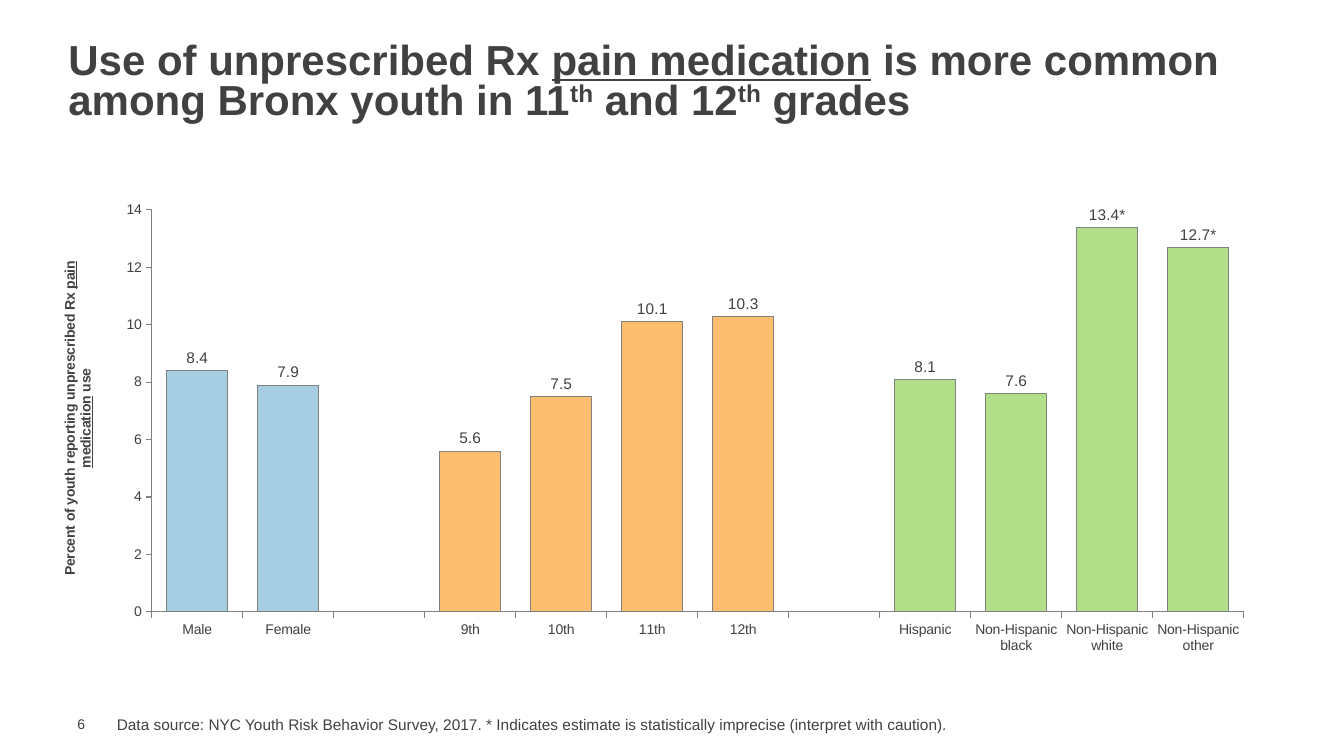
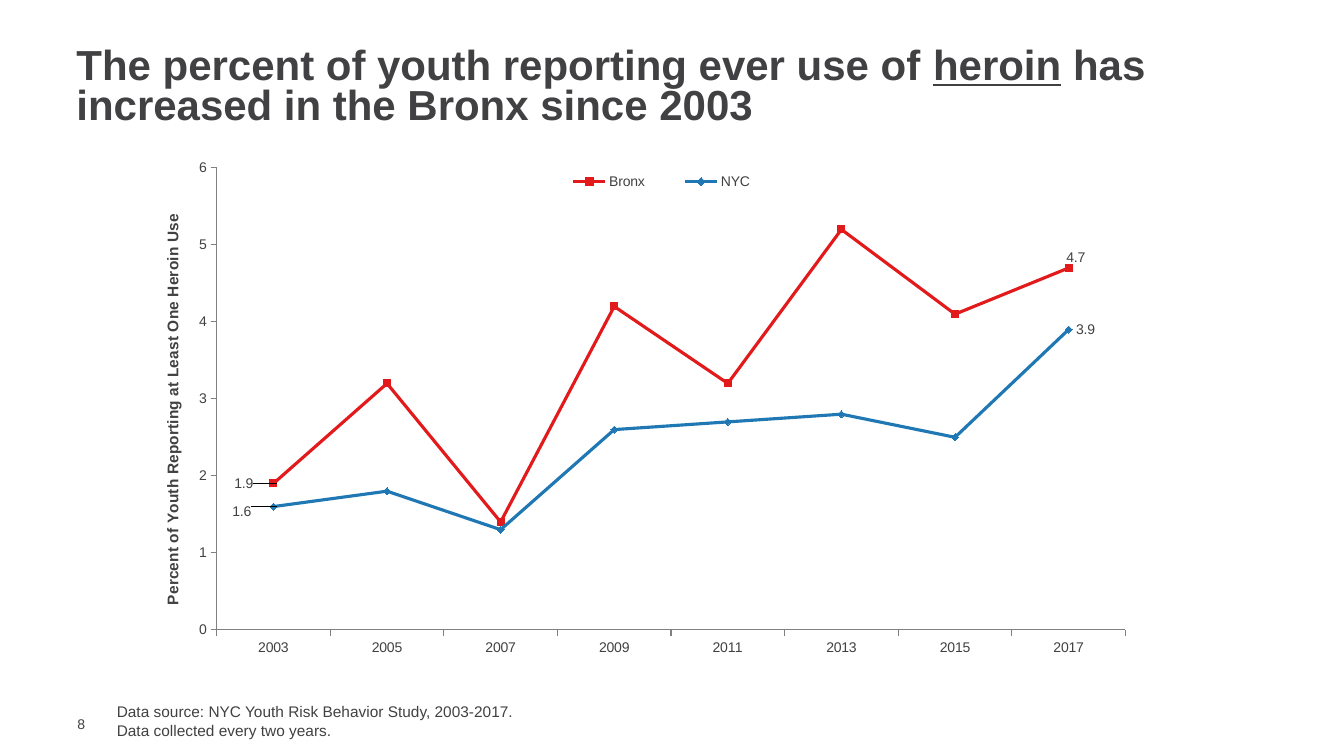
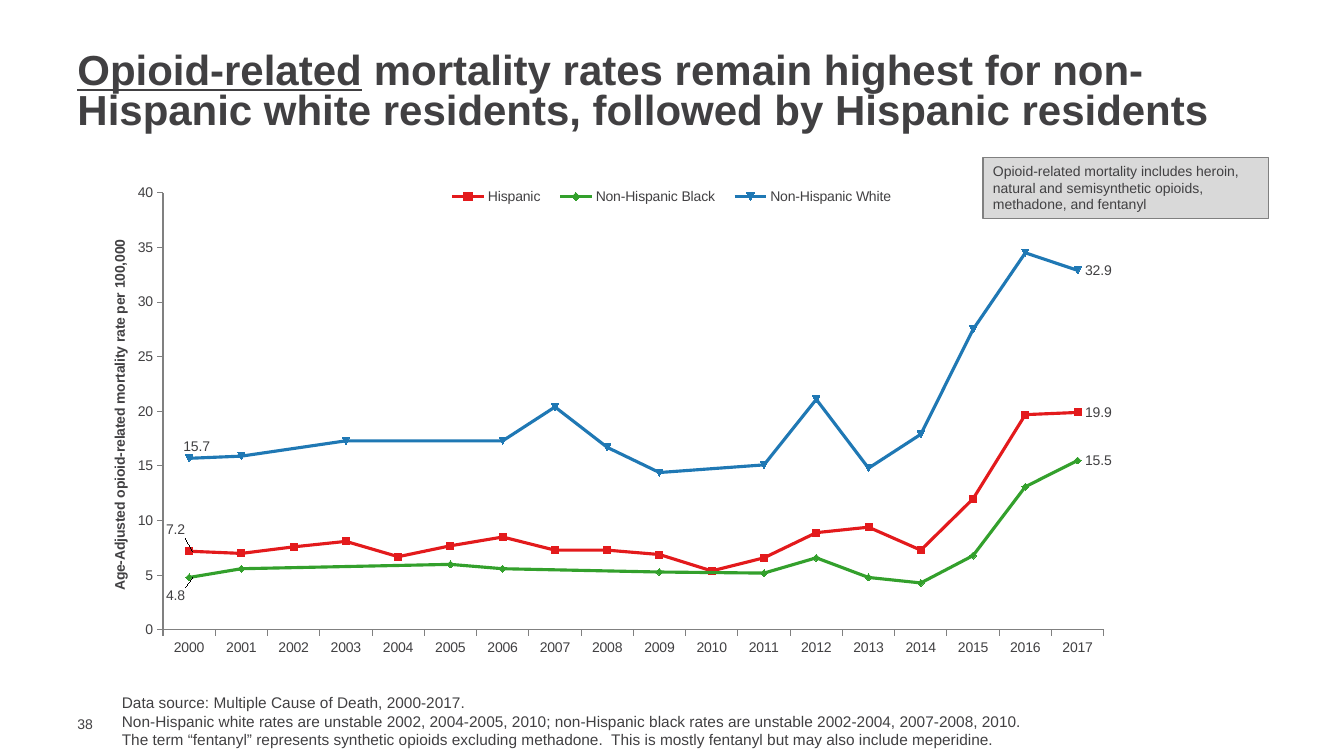
import pptx
import pptx.chart.data
import pptx.dml.color
import pptx.enum.chart
import pptx.enum.shapes
import pptx.enum.text
import pptx.oxml
import pptx.oxml.ns
import pptx.util
from pptx.util import Inches

# Shared style
FONT = "Arial"
TEXT, AXIS, WHITE, NOTE_FILL = "414042", "808080", "FFFFFF", "D9D9D9"
RED, BLUE, GREEN = "E31A1C", "1F78B4", "33A02C"
PALE_BLUE, PALE_ORANGE, PALE_GREEN = "A6CEE3", "FDBF6F", "B2DF8A"
CHART_TYPE = pptx.enum.chart.XL_CHART_TYPE
LABEL_POSITION = pptx.enum.chart.XL_LABEL_POSITION
MIDDLE = pptx.enum.text.MSO_ANCHOR.MIDDLE
LEADER_LINES = (
    '<c:extLst xmlns:c="http://schemas.openxmlformats.org/drawingml/2006/chart">'
    '<c:ext uri="{CE6537A1-D6FC-4f65-9D91-7224C49458BB}" '
    'xmlns:c15="http://schemas.microsoft.com/office/drawing/2012/chart">'
    '<c15:showLeaderLines val="1"/></c:ext></c:extLst>')


def colour(value):
    return pptx.dml.color.RGBColor.from_string(value)


def style_font(font, size, bold=False):
    font.name = FONT
    font.size = pptx.util.Pt(size)
    font.bold = bold
    font.color.rgb = colour(TEXT)


def style_line(line, value, width=0.75):
    line.color.rgb = colour(value)
    line.width = pptx.util.Pt(width)


def paint(fill, value):
    fill.solid()
    fill.fore_color.rgb = colour(value)


def add_runs(paragraph, runs):
    """Runs are (text, style) pairs; style is "", "underline" or "super"."""
    for text, style in runs:
        run = paragraph.add_run()
        run.text = text
        if style == "underline":
            run.font.underline = True
        elif style == "super":
            run._r.get_or_add_rPr().set("baseline", "30000")


# Text regions
def fill_text(shape, paragraphs, size, bold=False, spacing=None):
    frame = shape.text_frame
    frame.word_wrap = True
    for index, runs in enumerate(paragraphs):
        paragraph = frame.paragraphs[0] if index == 0 else frame.add_paragraph()
        paragraph.alignment = pptx.enum.text.PP_ALIGN.LEFT
        if spacing:
            paragraph.line_spacing = spacing
        style_font(paragraph.font, size, bold)
        add_runs(paragraph, runs)
    return frame


def add_text(slide, box, paragraphs, size, **options):
    shape = slide.shapes.add_textbox(*map(Inches, box))
    return fill_text(shape, paragraphs, size, **options)


def add_page(presentation, number, title_at, title, source_box, sources):
    slide = presentation.slides.add_slide(presentation.slide_layouts[6])
    paint(slide.background.fill, WHITE)
    # Page number
    frame = add_text(slide, (0.67, 7.1, 0.43, 0.17), [[(str(number), "")]], 10)
    frame.margin_left = Inches(0.1)
    frame.margin_right = frame.margin_top = frame.margin_bottom = 0
    frame.vertical_anchor = MIDDLE
    # Title
    frame = add_text(slide, (*title_at, 12, 0.91), [title], 30, bold=True, spacing=0.8)
    frame.vertical_anchor = MIDDLE
    # Source lines
    add_text(slide, source_box, [[(line, "")] for line in sources], 11)
    return slide


def add_note(slide, box, text):
    shape = slide.shapes.add_shape(
        pptx.enum.shapes.MSO_SHAPE.RECTANGLE, *map(Inches, box))
    shape.shadow.inherit = False
    paint(shape.fill, NOTE_FILL)
    style_line(shape.line, AXIS)
    frame = fill_text(shape, [[(text, "")]], 10)
    frame.vertical_anchor = pptx.enum.text.MSO_ANCHOR.TOP


# Charts
def set_layout(element, index, numbers, mode="edge", inner=False):
    """Place a chart part by fractions of the chart: x, y and maybe w, h."""
    tag = pptx.oxml.ns.qn
    layout = element.find(tag("c:layout"))
    if layout is None:
        layout = element.makeelement(tag("c:layout"), {})
        element.insert(index, layout)
    manual = layout.makeelement(tag("c:manualLayout"), {})
    layout.append(manual)
    entries = [("layoutTarget", "inner")] if inner else []
    entries += [("xMode", mode), ("yMode", mode)]
    entries += zip("xywh", numbers)
    for name, value in entries:
        manual.append(manual.makeelement(tag("c:" + name), {"val": str(value)}))


def add_chart(slide, box, kind, categories, series, top, step, plot_at,
              axis_title, title_at, title_size=10):
    data = pptx.chart.data.CategoryChartData()
    data.categories = categories
    for name, values in series:
        data.add_series(name, values)
    chart = slide.shapes.add_chart(kind, *map(Inches, box), data).chart
    chart.has_title = False
    chart.has_legend = False
    style_font(chart.font, 10)
    chart.plots[0].vary_by_categories = False
    # Axes
    for axis in (chart.category_axis, chart.value_axis):
        axis.has_major_gridlines = False
        axis.major_tick_mark = pptx.enum.chart.XL_TICK_MARK.OUTSIDE
        style_line(axis.format.line, AXIS)
        style_font(axis.tick_labels.font, 10)
    axis = chart.value_axis
    axis.minimum_scale, axis.maximum_scale, axis.major_unit = 0, top, step
    # Axis title
    frame = axis.axis_title.text_frame
    frame._txBody.bodyPr.set("rot", "-5400000")
    frame._txBody.bodyPr.set("vert", "horz")
    style_font(frame.paragraphs[0].font, title_size, bold=True)
    add_runs(frame.paragraphs[0], axis_title)
    set_layout(axis.axis_title._element, 0, title_at)
    plot_area = chart._chartSpace.xpath("c:chart/c:plotArea")[0]
    set_layout(plot_area, 0, plot_at, inner=True)
    return chart


def add_column_chart(slide, box, groups, starred, **options):
    """Groups are (colour, {category: value}), set apart by an empty column."""
    columns = []
    for fill, group in groups:
        if columns:
            columns.append(("", None, None))
        columns += [(name, value, fill) for name, value in group.items()]
    names, values, fills = zip(*columns)
    chart = add_chart(slide, box, CHART_TYPE.COLUMN_CLUSTERED, names,
                      [("Series 1", values)], **options)
    plot = chart.plots[0]
    plot.gap_width = 50
    series = plot.series[0]
    series.invert_if_negative = False
    paint(series.format.fill, PALE_GREEN)
    style_line(series.format.line, AXIS)
    labels = series.data_labels
    labels.show_value = True
    labels.position = LABEL_POSITION.OUTSIDE_END
    style_font(labels.font, 11)
    for index, (name, value, fill) in enumerate(columns):
        if fill is None:
            continue
        point = series.points[index]
        paint(point.format.fill, fill)
        style_line(point.format.line, AXIS)
        if name in starred:
            paragraph = point.data_label.text_frame.paragraphs[0]
            style_font(paragraph.font, 11)
            add_runs(paragraph, [(f"{value}*", "")])
            point.data_label.position = LABEL_POSITION.OUTSIDE_END


def add_line_chart(slide, box, years, lines, legend_at, **options):
    """Lines are (name, colour, values, first label shift, last label shift)."""
    chart = add_chart(slide, box, CHART_TYPE.LINE_MARKERS, years,
                      [(name, values) for name, _, values, _, _ in lines], **options)
    # Lines run on across missing years
    chart._chartSpace.xpath("c:chart/c:dispBlanksAs")[0].set("val", "span")
    # Legend
    chart.has_legend = True
    chart.legend.position = pptx.enum.chart.XL_LEGEND_POSITION.TOP
    chart.legend.include_in_layout = False
    style_font(chart.legend.font, 10)
    set_layout(chart.legend._element, 1, legend_at)
    # Lines, markers and end labels
    for series, (_, value, _, first, last) in zip(chart.plots[0].series, lines):
        series.smooth = False
        style_line(series.format.line, value, 2.25)
        series.marker.style = pptx.enum.chart.XL_MARKER_STYLE.AUTOMATIC
        series.marker.size = 5
        paint(series.marker.format.fill, value)
        style_line(series.marker.format.line, value)
        series.data_labels.show_value = False
        for index, shift in ((0, first), (len(years) - 1, last)):
            label = series.points[index].data_label
            style_font(label.font, 10)
            label.position = LABEL_POSITION.RIGHT
            if shift:
                element = series._element.xpath(
                    f"c:dLbls/c:dLbl[c:idx/@val='{index}']")[0]
                set_layout(element, 1, shift, mode="factor")
        series.data_labels._element.append(pptx.oxml.parse_xml(LEADER_LINES))


# Slides
def build_pain_medication(presentation):
    slide = add_page(
        presentation, 6, (0.58, 0.37),
        [("Use of unprescribed Rx ", ""), ("pain medication", "underline"),
         (" is more common among Bronx youth in 11", ""), ("th", "super"),
         (" and 12", ""), ("th", "super"), (" grades", "")],
        (1.06, 7.05, 9.92, 0.29),
        ["Data source: NYC Youth Risk Behavior Survey, 2017. "
         "* Indicates estimate is statistically imprecise (interpret with caution)."])
    groups = [
        (PALE_BLUE, {"Male": 8.4, "Female": 7.9}),
        (PALE_ORANGE, {"9th": 5.6, "10th": 7.5, "11th": 10.1, "12th": 10.3}),
        (PALE_GREEN, {"Hispanic": 8.1, "Non-Hispanic black": 7.6,
                      "Non-Hispanic white": 13.4, "Non-Hispanic other": 12.7})]
    add_column_chart(
        slide, (0.41, 1.92, 12.17, 4.67), groups,
        starred=("Non-Hispanic white", "Non-Hispanic other"),
        top=14, step=2, plot_at=(0.09, 0.035, 0.89, 0.854),
        axis_title=[("Percent of youth reporting unprescribed Rx ", ""),
                    ("pain medication", "underline"), (" use", "")],
        title_at=(0.013, 0.137))


def build_heroin(presentation):
    slide = add_page(
        presentation, 8, (0.66, 0.42),
        [("The percent of youth reporting ever use of ", ""),
         ("heroin", "underline"), (" has increased in the Bronx since 2003", "")],
        (1.06, 6.92, 9.92, 0.47),
        ["Data source: NYC Youth Risk Behavior Study, 2003-2017.",
         "Data collected every two years."])
    lines = [
        ("Bronx", RED, [1.9, 3.2, 1.4, 4.2, 3.2, 5.2, 4.1, 4.7],
         (-0.047, 0), (-0.01, -0.019)),
        ("NYC", BLUE, [1.6, 1.8, 1.3, 2.6, 2.7, 2.8, 2.5, 3.9],
         (-0.049, 0.01), None)]
    add_line_chart(
        slide, (1.5, 1.33, 9.83, 5.25), [str(year) for year in range(2003, 2018, 2)],
        lines, legend_at=(0.39, 0.07, 0.25, 0.04),
        top=6, step=1, plot_at=(0.066, 0.064, 0.917, 0.873),
        axis_title=[("Percent of Youth Reporting at Least One Heroin Use", "")],
        title_at=(0.008, 0.146), title_size=11)


def build_mortality(presentation):
    slide = add_page(
        presentation, 38, (0.67, 0.47),
        [("Opioid-related", "underline"),
         (" mortality rates remain highest for non-Hispanic white residents, "
          "followed by Hispanic residents", "")],
        (1.11, 6.83, 9.71, 0.66),
        ["Data source: Multiple Cause of Death, 2000-2017.",
         "Non-Hispanic white rates are unstable 2002, 2004-2005, 2010; "
         "non-Hispanic black rates are unstable 2002-2004, 2007-2008, 2010.",
         "The term “fentanyl” represents synthetic opioids excluding methadone.  "
         "This is mostly fentanyl but may also include meperidine."])
    lines = [
        ("Hispanic", RED,
         [7.2, 7, 7.6, 8.1, 6.7, 7.7, 8.5, 7.3, 7.3, 6.9, 5.4, 6.6, 8.9, 9.4, 7.3,
          12, 19.7, 19.9], (-0.03, -0.043), None),
        ("Non-Hispanic Black", GREEN,
         [4.8, 5.6, None, None, None, 6, 5.6, None, None, 5.3, None, 5.2, 6.6, 4.8,
          4.3, 6.8, 13.1, 15.5], (-0.03, 0.037), None),
        ("Non-Hispanic White", BLUE,
         [15.7, 15.9, None, 17.3, None, None, 17.3, 20.4, 16.7, 14.4, None, 15.1,
          21.1, 14.8, 17.9, 27.5, 34.5, 32.9], (-0.013, -0.024), None)]
    add_line_chart(
        slide, (1, 1.83, 10.11, 4.88), [str(year) for year in range(2000, 2018)],
        lines, legend_at=(0.33, 0.005, 0.46, 0.04),
        top=40, step=5, plot_at=(0.061, 0.017, 0.923, 0.889),
        axis_title=[("Age-Adjusted opioid-related mortality rate per 100,000", "")],
        title_at=(0.007, 0.107))
    add_note(slide, (9.75, 1.56, 2.83, 0.61),
             "Opioid-related mortality includes heroin, natural and semisynthetic "
             "opioids, methadone, and fentanyl")


def main():
    presentation = pptx.Presentation()
    presentation.slide_width = Inches(13.33)
    presentation.slide_height = Inches(7.5)
    build_pain_medication(presentation)
    build_heroin(presentation)
    build_mortality(presentation)
    presentation.save("out.pptx")


if __name__ == "__main__":
    main()
